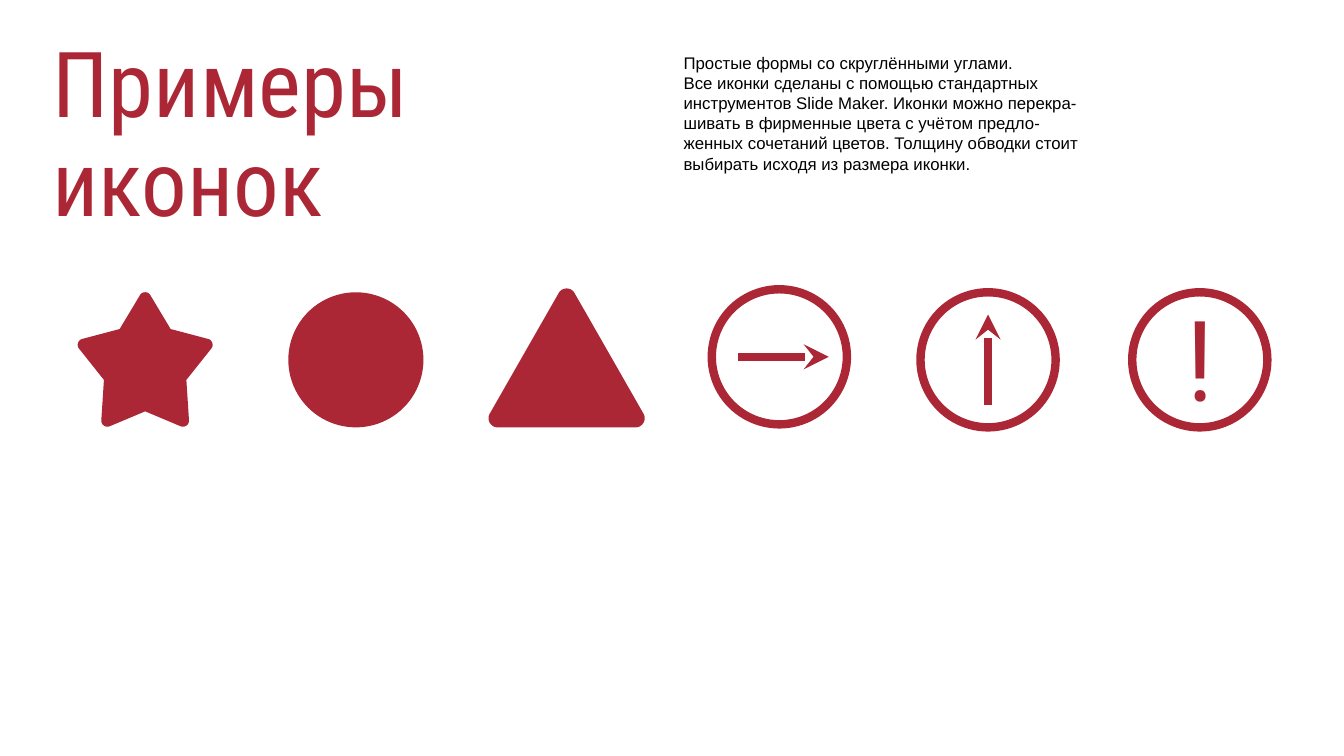
from math import cos, hypot, pi, sin

from pptx import Presentation
from pptx.dml.color import RGBColor
from pptx.enum.shapes import MSO_CONNECTOR, MSO_SHAPE
from pptx.enum.text import MSO_ANCHOR, MSO_AUTO_SIZE, PP_ALIGN
from pptx.oxml.ns import qn
from pptx.util import Inches, Pt

RED = "AB2735"
STROKE = 6
DIAMETER = 1.34
FIRST_COLUMN, COLUMN_STEP = 1.44, 2.09
ROW = 3.57
HEADING_FONT = "Roboto Condensed"

TITLE = "Примеры\vиконок"
BODY = (
    "Простые формы со скруглёнными углами.\v"
    "Все иконки сделаны с помощью стандартных инструментов Slide Maker. "
    "Иконки можно перекра-шивать в фирменные цвета с учётом предло-женных "
    "сочетаний цветов. Толщину обводки стоит выбирать исходя из размера иконки."
)


def rgb(color):
    return RGBColor.from_string(color)


def column(index):
    """Centre of an icon column, in inches."""
    return FIRST_COLUMN + index * COLUMN_STEP


def place(sp, x, y, w, h):
    sp.left, sp.top, sp.width, sp.height = map(Inches, (x, y, w, h))


def set_text(sp, text, font, size, color, align=PP_ALIGN.LEFT,
             anchor=MSO_ANCHOR.TOP, auto_size=MSO_AUTO_SIZE.NONE, spacing=1.0):
    tf = sp.text_frame
    tf.text = text
    tf.word_wrap = True
    tf.auto_size = auto_size
    tf.vertical_anchor = anchor
    tf.margin_left = tf.margin_top = tf.margin_right = tf.margin_bottom = 0
    p = tf.paragraphs[0]
    p.alignment = align
    p.line_spacing = spacing
    p.space_before = Pt(0)
    for r in p.runs:
        r.font.name = font
        r.font.size = Pt(size)
        r.font.color.rgb = rgb(color)


def remove_bullet(p):
    pPr = p._p.get_or_add_pPr()
    pPr.set("marL", "0")
    pPr.set("indent", "0")
    pPr.append(pPr.makeelement(qn("a:buNone"), {}))


def fill_red(sp):
    sp.shadow.inherit = False
    sp.fill.solid()
    sp.fill.fore_color.rgb = rgb(RED)
    sp.line.fill.background()


def add_circle(shapes, x, y):
    half = DIAMETER / 2
    return shapes.add_shape(MSO_SHAPE.OVAL, Inches(x - half), Inches(y - half),
                            Inches(DIAMETER), Inches(DIAMETER))


def add_ring(shapes, x, y):
    sp = add_circle(shapes, x, y)
    sp.shadow.inherit = False
    sp.fill.background()
    sp.line.color.rgb = rgb(RED)
    sp.line.width = Pt(STROKE)


def add_arrow(shapes, x1, y1, x2, y2):
    line = shapes.add_connector(MSO_CONNECTOR.STRAIGHT,
                                *map(Inches, (x1, y1, x2, y2)))
    line.line.color.rgb = rgb(RED)
    line.line.width = Pt(STROKE)
    ln = line.line._get_or_add_ln()
    ln.append(ln.makeelement(qn("a:tailEnd"), {"type": "stealth"}))
    spPr = line._element.spPr
    spPr.append(spPr.makeelement(qn("a:effectLst"), {}))


def unit(x, y):
    length = hypot(x, y)
    return x / length, y / length


def round_corner(before, corner, after, radius, steps=10):
    """Points of the arc that replaces a corner."""
    x, y = corner
    ux, uy = unit(before[0] - x, before[1] - y)
    vx, vy = unit(after[0] - x, after[1] - y)
    mx, my = unit(ux + vx, uy + vy)
    half_sin = abs(ux * my - uy * mx)
    half_cos = ux * mx + uy * my
    cut = radius * half_cos / half_sin
    cx, cy = x + mx * radius / half_sin, y + my * radius / half_sin
    sx, sy = x + ux * cut - cx, y + uy * cut - cy
    ex, ey = x + vx * cut - cx, y + vy * cut - cy
    for k in range(steps + 1):
        t = k / steps
        dx, dy = unit(sx + (ex - sx) * t, sy + (ey - sy) * t)
        yield cx + dx * radius, cy + dy * radius


def add_rounded(shapes, corners, radii):
    """Filled polygon whose corners are rounded by the given radii."""
    points = []
    for i, (corner, radius) in enumerate(zip(corners, radii)):
        if radius:
            after = corners[(i + 1) % len(corners)]
            points += round_corner(corners[i - 1], corner, after, radius)
        else:
            points.append(corner)
    # The builder keeps whole units only, so the outline is drawn in EMU.
    outline = [(Inches(x), Inches(y)) for x, y in points]
    builder = shapes.build_freeform(*outline[0])
    builder.add_line_segments(outline[1:], close=True)
    fill_red(builder.convert_to_shape())


def add_star(shapes, x, y):
    corners = []
    for i in range(10):
        reach = 0.43 if i % 2 else 0.75
        angle = i * pi / 5
        corners.append((x + reach * sin(angle), y - 1.05 * reach * cos(angle)))
    add_rounded(shapes, corners, [0.06, 0] * 5)


def add_triangle(shapes, x, top, bottom, half_base):
    corners = [(x, top), (x + half_base, bottom), (x - half_base, bottom)]
    add_rounded(shapes, corners, [0.09] * 3)


def main():
    prs = Presentation()
    prs.slide_width, prs.slide_height = Inches(13.33), Inches(7.5)
    s = prs.slides.add_slide(prs.slide_layouts[1])
    shapes = s.shapes

    title, body = s.placeholders
    place(title, 0.52, 0.39, 6.02, 1.97)
    set_text(title, TITLE, HEADING_FONT, 65, RED, spacing=0.9,
             auto_size=MSO_AUTO_SIZE.SHAPE_TO_FIT_TEXT)
    place(body, 6.78, 0.52, 3.94, 1.36)
    set_text(body, BODY, "Arial", 12, "000000")
    remove_bullet(body.text_frame.paragraphs[0])

    add_star(shapes, column(0), ROW + 0.06)
    fill_red(add_circle(shapes, column(1), ROW))
    add_triangle(shapes, column(2), 2.77, ROW + DIAMETER / 2, 0.84)

    reach = 0.45
    x, y = column(3) + 0.02, ROW - 0.03
    add_ring(shapes, x, y)
    add_arrow(shapes, x - reach + 0.04, y, x + reach + 0.04, y)

    x = column(4)
    add_ring(shapes, x, ROW)
    add_arrow(shapes, x, ROW + reach, x, ROW - reach)

    x = column(5) + 0.01
    add_ring(shapes, x, ROW)
    mark = shapes.add_textbox(0, 0, 0, 0)
    place(mark, x - 0.15, 2.86, 0.31, 1.36)
    set_text(mark, "!", HEADING_FONT, 80, RED, PP_ALIGN.CENTER,
             MSO_ANCHOR.MIDDLE)

    prs.save("out.pptx")


if __name__ == "__main__":
    main()
